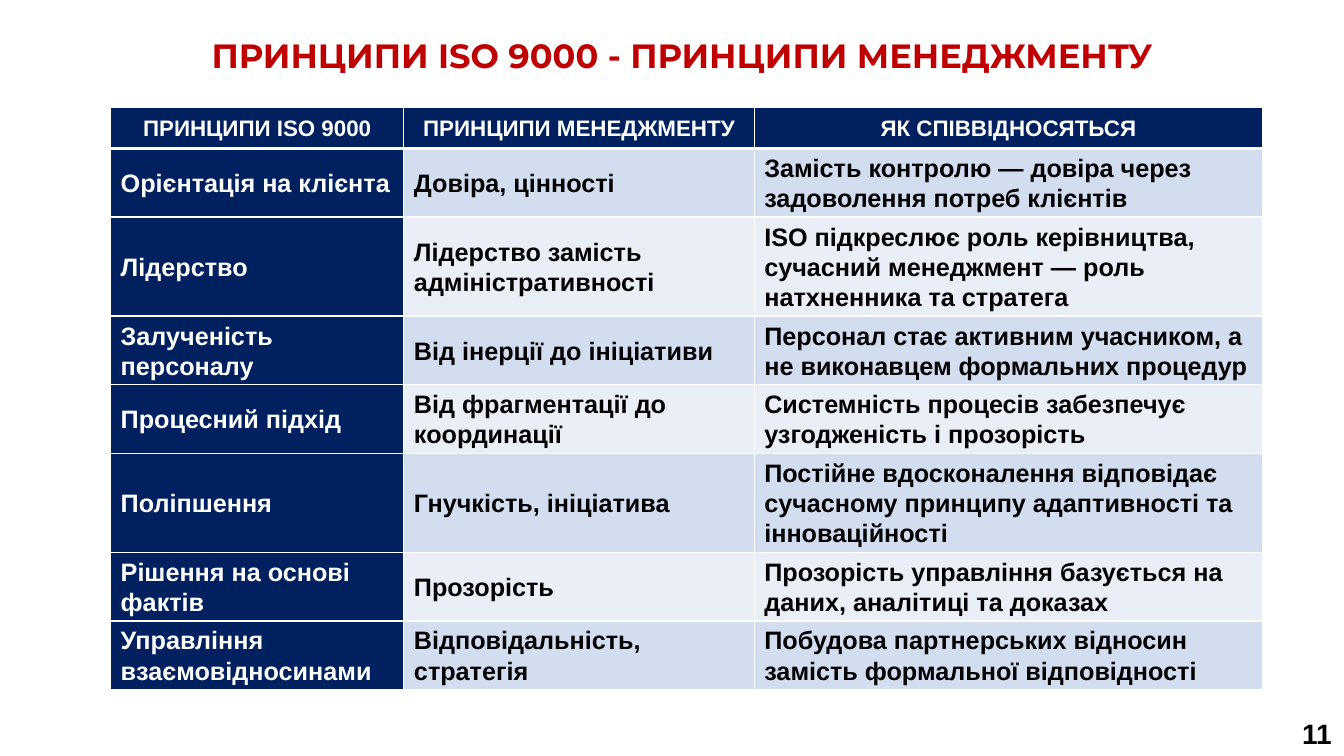
from dataclasses import dataclass

from lxml import etree
from pptx import Presentation
from pptx.dml.color import RGBColor
from pptx.enum.text import MSO_ANCHOR, MSO_AUTO_SIZE, PP_ALIGN
from pptx.oxml.ns import qn
from pptx.util import Pt

LEFT, CENTER, JUSTIFY = PP_ALIGN.LEFT, PP_ALIGN.CENTER, PP_ALIGN.JUSTIFY
TOP, MIDDLE = MSO_ANCHOR.TOP, MSO_ANCHOR.MIDDLE
FIT_SHAPE = MSO_AUTO_SIZE.SHAPE_TO_FIT_TEXT

RED = RGBColor(0xC0, 0x00, 0x00)
NAVY = RGBColor(0x00, 0x20, 0x60)
WHITE = RGBColor(0xFF, 0xFF, 0xFF)
BLACK = RGBColor(0x00, 0x00, 0x00)
BANDS = (RGBColor(0xD2, 0xDE, 0xEF), RGBColor(0xEA, 0xEF, 0xF7))

COL_WIDTHS = (209.5, 250.25, 363.25)
HEADER_HEIGHT, ROW_HEIGHT = 29.5, 49
CELL_MARGIN, CELL_INDENT = 0.75, 6.5
THIN, THICK = 1, 3


@dataclass
class Principle:
    name: str
    management: str
    relation: str
    management_align: PP_ALIGN = LEFT


HEADERS = ("ПРИНЦИПИ ISO 9000", "ПРИНЦИПИ МЕНЕДЖМЕНТУ", "ЯК СПІВВІДНОСЯТЬСЯ")
PRINCIPLES = (
    Principle("Орієнтація на клієнта", "Довіра, цінності",
              "Замість контролю — довіра через задоволення потреб клієнтів"),
    Principle("Лідерство", "Лідерство замість адміністративності",
              "ISO підкреслює роль керівництва, сучасний менеджмент — роль "
              "натхненника та стратега"),
    Principle("Залученість персоналу", "Від інерції до ініціативи",
              "Персонал стає активним учасником, а не виконавцем формальних "
              "процедур"),
    Principle("Процесний підхід", "Від фрагментації до координації",
              "Системність процесів забезпечує узгодженість і прозорість"),
    Principle("Поліпшення", "Гнучкість, ініціатива",
              "Постійне вдосконалення відповідає сучасному принципу "
              "адаптивності та інноваційності"),
    Principle("Рішення на основі фактів", "Прозорість",
              "Прозорість управління базується на даних, аналітиці та доказах",
              JUSTIFY),
    Principle("Управління взаємовідносинами", "Відповідальність, стратегія",
              "Побудова партнерських відносин замість формальної "
              "відповідності", JUSTIFY),
)


def write_text(tf, text: str, *, size: float, color: RGBColor,
               font: str = "Arial", align: PP_ALIGN = LEFT,
               spacing: float = 1.0, margin: float = 0,
               indent: float = 0) -> None:
    """Fill a text frame with one bold paragraph."""
    p = tf.paragraphs[0]
    p.alignment = align
    p.line_spacing = spacing
    pPr = p._p.get_or_add_pPr()
    pPr.set("marL", str(Pt(margin)))
    pPr.set("indent", str(Pt(indent)))
    r = p.add_run()
    r.text = text
    r.font.name = font
    r.font.size = Pt(size)
    r.font.bold = True
    r.font.color.rgb = color


def set_borders(cell, top: float, bottom: float) -> None:
    """Draw white cell borders; widths are in points."""
    tcPr = cell._tc.get_or_add_tcPr()
    sides = (("lnL", THIN), ("lnR", THIN), ("lnT", top), ("lnB", bottom))
    for tag, width in sides:
        ln = etree.SubElement(tcPr, qn(f"a:{tag}"), w=str(Pt(width)))
        fill = etree.SubElement(ln, qn("a:solidFill"))
        etree.SubElement(fill, qn("a:srgbClr"), val=str(WHITE))


def fill_cell(cell, text: str, fill: RGBColor, *, top: float = THIN,
              bottom: float = THIN, **text_format) -> None:
    """Format a table cell and write its text."""
    cell.margin_left = cell.margin_right = Pt(CELL_MARGIN)
    cell.margin_top = cell.margin_bottom = Pt(CELL_MARGIN)
    cell.vertical_anchor = MIDDLE
    set_borders(cell, top, bottom)
    cell.fill.solid()
    cell.fill.fore_color.rgb = fill
    write_text(cell.text_frame, text, spacing=1.07, **text_format)


def add_title(slide) -> None:
    sp = slide.shapes.title
    sp.left, sp.top, sp.width, sp.height = Pt(0), Pt(21.5), Pt(960), Pt(36)
    tf = sp.text_frame
    tf.word_wrap = True
    tf.auto_size = FIT_SHAPE
    tf.vertical_anchor = TOP
    write_text(tf, "ПРИНЦИПИ ISO 9000 - ПРИНЦИПИ МЕНЕДЖМЕНТУ", size=24,
               color=RED, font="Montserrat", align=CENTER, indent=14.4)


def add_principles_table(slide) -> None:
    height = HEADER_HEIGHT + ROW_HEIGHT * len(PRINCIPLES)
    table = slide.shapes.add_table(
        len(PRINCIPLES) + 1, len(HEADERS), Pt(79), Pt(76.5),
        Pt(sum(COL_WIDTHS)), Pt(height)).table
    for column, width in zip(table.columns, COL_WIDTHS):
        column.width = Pt(width)
    for i, row in enumerate(table.rows):
        row.height = Pt(ROW_HEIGHT if i else HEADER_HEIGHT)

    # Header row
    for col, text in enumerate(HEADERS):
        fill_cell(table.cell(0, col), text, NAVY, bottom=THICK,
                  size=16, color=WHITE, align=CENTER)

    # Banded body with a dark first column
    for i, item in enumerate(PRINCIPLES):
        band = BANDS[i % len(BANDS)]
        columns = (
            (item.name, NAVY, WHITE, LEFT),
            (item.management, band, BLACK, item.management_align),
            (item.relation, band, BLACK, LEFT),
        )
        for col, (text, fill, color, align) in enumerate(columns):
            fill_cell(table.cell(i + 1, col), text, fill,
                      top=THIN if i else THICK, size=18, color=color,
                      align=align, margin=CELL_INDENT)


def add_page_number(slide) -> None:
    sp = slide.shapes.add_textbox(Pt(923), Pt(508.5), Pt(37), Pt(31.5))
    tf = sp.text_frame
    tf.word_wrap = False
    tf.auto_size = FIT_SHAPE
    write_text(tf, "11", size=20, color=BLACK)


def main() -> None:
    prs = Presentation()
    prs.slide_width, prs.slide_height = Pt(960), Pt(540)
    slide = prs.slides.add_slide(prs.slide_layouts.get_by_name("Title Only"))
    add_title(slide)
    add_principles_table(slide)
    add_page_number(slide)
    prs.save("out.pptx")


if __name__ == "__main__":
    main()
